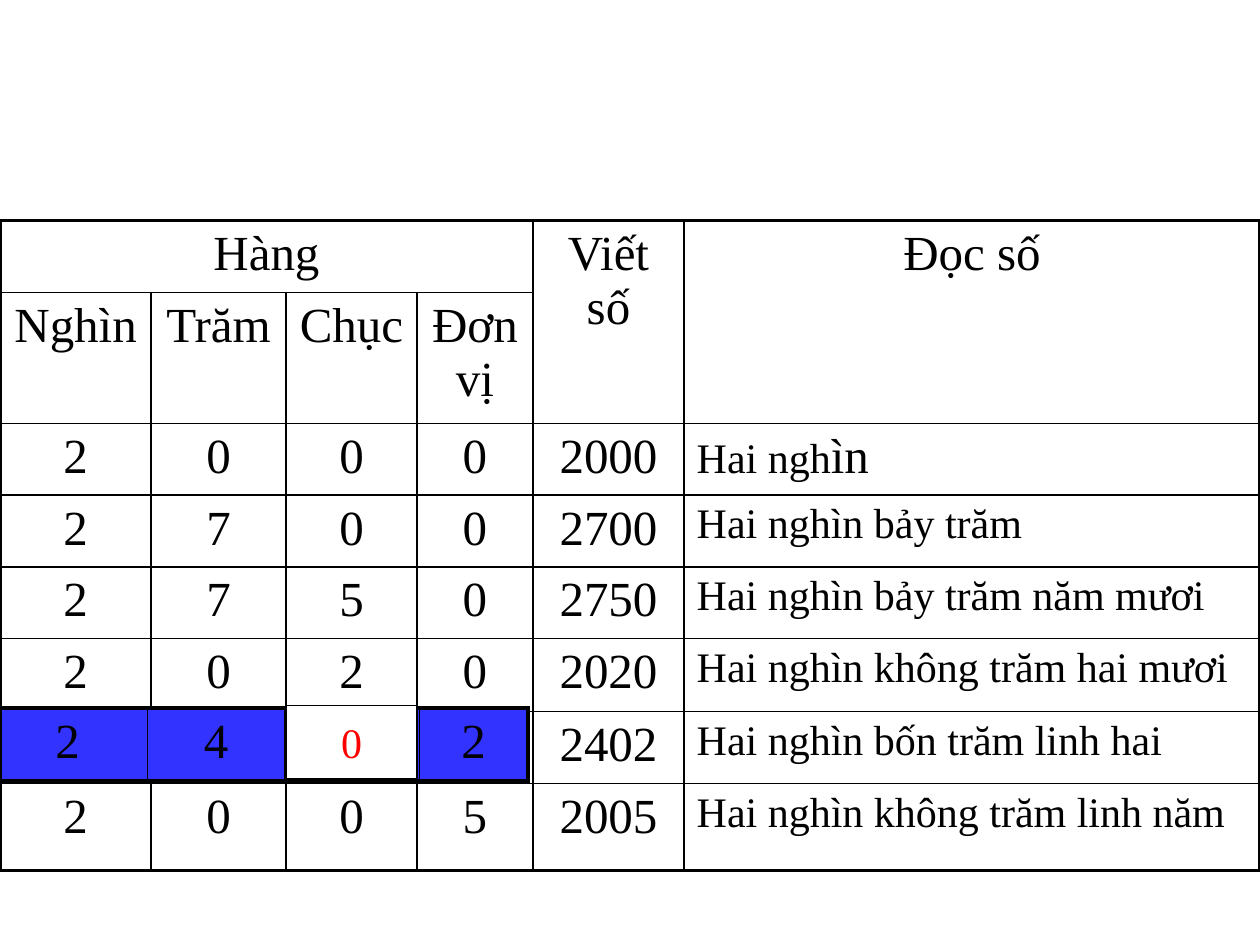
from lxml.etree import SubElement
from pptx import Presentation
from pptx.dml.color import RGBColor
from pptx.enum.shapes import MSO_SHAPE
from pptx.enum.text import MSO_ANCHOR, PP_ALIGN
from pptx.oxml import parse_xml
from pptx.oxml.ns import qn
from pptx.util import Inches, Pt

COLORS = {"ink": "000000", "paper": "FFFFFF", "band": "3333FF", "red": "FF0000"}
FONT = "Times New Roman"
BIG, SMALL = 28, 24
THIN, THICK = 1, 2.25

COLS = [1.2, 1.07, 1.04, 0.92, 1.2, 4.57]
ROWS = [0.57, 1.04, 0.57, 0.57, 0.57, 0.58, 0.57, 0.69]
HEADER = [
    ["Hàng", "", "", "", "Viết số", "Đọc số"],
    ["Nghìn", "Trăm", "Chục", "Đơn vị", "", ""],
]
NUMBERS = [
    ("2000", [("Hai ngh", SMALL), ("ìn", BIG)]),
    ("2700", "Hai nghìn bảy trăm"),
    ("2750", "Hai nghìn bảy trăm năm mươi"),
    ("2020", "Hai nghìn không trăm hai mươi"),
    ("2402", "Hai nghìn bốn trăm linh hai"),
    ("2005", "Hai nghìn không trăm linh năm"),
]
MERGES = [((0, 0), (0, 3)), ((0, 4), (1, 4)), ((0, 5), (1, 5))]
BAND_COLS = [1.17, 1.09, 1.07, 0.86]
BAND_ROWS = [0.58]
BAND = [["2 ", "4", "0", "2"]]


def rgb(name):
    return RGBColor.from_string(COLORS[name])


def style(p, size, color="ink", align=PP_ALIGN.CENTER):
    p.alignment = align
    p.font.name, p.font.size = FONT, Pt(size)
    p.font.color.rgb = rgb(color)


def set_borders(cell, widths):
    tc_pr = cell._tc.get_or_add_tcPr()
    for i, (side, width) in enumerate(widths.items()):
        ln = SubElement(tc_pr, qn(f"a:ln{side}"), w=str(Pt(width)))
        fill = SubElement(ln, qn("a:solidFill"))
        SubElement(fill, qn("a:srgbClr"), val=COLORS["ink"])
        tc_pr.remove(ln)
        tc_pr.insert(i, ln)


def fill_cell(cell, text, fill, is_reading):
    cell.fill.solid()
    cell.fill.fore_color.rgb = rgb(fill)
    p = cell.text_frame.paragraphs[0]
    if isinstance(text, str):
        p.text = text
    else:
        for part, size in text:
            r = p.add_run()
            r.text, r.font.size = part, Pt(size)
    if is_reading:
        style(p, SMALL, align=PP_ALIGN.LEFT)
    else:
        style(p, BIG)
    p._p.get_or_add_pPr().insert(0, parse_xml(
        '<a:spcBef xmlns:a="http://schemas.openxmlformats.org/drawingml/2006/main">'
        '<a:spcPct val="20000"/></a:spcBef>'))


def add_grid(s, top, cols, rows, data, fill, merges=()):
    t = s.shapes.add_table(len(rows), len(cols), 0, Inches(top),
                           Inches(sum(cols)), Inches(sum(rows))).table
    t.first_row = t.horz_banding = False
    for col, width in zip(t.columns, cols):
        col.width = Inches(width)
    for row, height in zip(t.rows, rows):
        row.height = Inches(height)
    for i, texts in enumerate(data):
        for j, text in enumerate(texts):
            cell = t.cell(i, j)
            fill_cell(cell, text, fill, j == 5 and i >= len(HEADER))
            edges = {"L": j == 0, "R": j == len(cols) - 1,
                     "T": i == 0, "B": i == len(rows) - 1}
            set_borders(cell, {k: THICK if v else THIN for k, v in edges.items()})
    for first, last in merges:
        t.cell(*first).merge(t.cell(*last))


def add_answer(s):
    sp = s.shapes.add_shape(MSO_SHAPE.RECTANGLE, Inches(2.27), Inches(5.6),
                            Inches(1.04), Inches(0.58))
    sp.shadow.inherit = False
    sp.fill.solid()
    sp.fill.fore_color.rgb = rgb("paper")
    sp.line.color.rgb = rgb("ink")
    sp.line.width = Pt(0.75)
    tf = sp.text_frame
    tf.word_wrap = False
    tf.vertical_anchor = MSO_ANCHOR.MIDDLE
    tf.text = "0"
    style(tf.paragraphs[0], SMALL, "red")


def main():
    """Build the slide on place value and reading of four-digit numbers."""
    prs = Presentation()
    prs.slide_width, prs.slide_height = Inches(10), Inches(7.5)
    s = prs.slides.add_slide(prs.slide_layouts[6])
    data = HEADER + [[*number, number, reading] for number, reading in NUMBERS]
    add_grid(s, 1.75, COLS, ROWS, data, "paper", MERGES)
    add_grid(s, 5.62, BAND_COLS, BAND_ROWS, BAND, "band")
    add_answer(s)
    prs.save("out.pptx")


if __name__ == "__main__":
    main()
